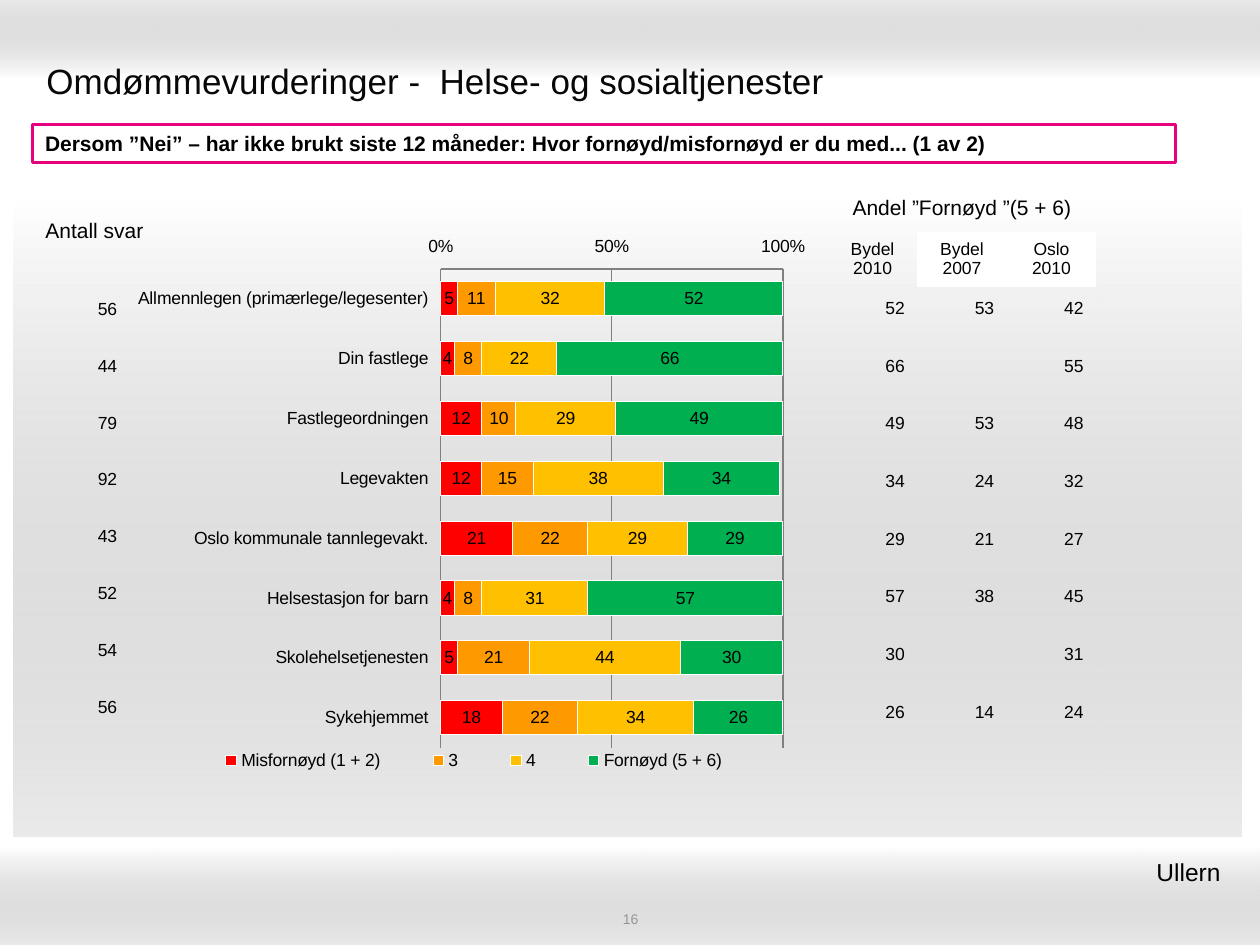
"""Build the slide on reputation ratings of health and social services."""
from lxml import etree
from pptx import Presentation
from pptx.chart.data import CategoryChartData
from pptx.dml.color import RGBColor
from pptx.enum.chart import XL_CHART_TYPE, XL_LEGEND_POSITION, XL_TICK_LABEL_POSITION, XL_TICK_MARK
from pptx.enum.shapes import MSO_SHAPE
from pptx.enum.text import MSO_ANCHOR, PP_ALIGN
from pptx.oxml import parse_xml
from pptx.oxml.ns import nsdecls, qn
from pptx.util import Inches, Pt

LEFT, CENTER, RIGHT = PP_ALIGN.LEFT, PP_ALIGN.CENTER, PP_ALIGN.RIGHT
TOP, MIDDLE = MSO_ANCHOR.TOP, MSO_ANCHOR.MIDDLE
LOW = XL_TICK_LABEL_POSITION.LOW
NO_TICK, INSIDE = XL_TICK_MARK.NONE, XL_TICK_MARK.INSIDE
NO_GRID_STYLE = "{2D5ABB26-0587-4C30-8999-92F81FD0307C}"

FONT = "Arial"
BLACK = RGBColor(0, 0, 0)
WHITE = RGBColor(0xFF, 0xFF, 0xFF)
TITLE_BLACK = RGBColor(0x08, 0x08, 0x08)
BAND_GRAY = RGBColor(0x99, 0x99, 0x99)
NUMBER_GRAY = RGBColor(0x96, 0x96, 0x96)
AXIS_GRAY = RGBColor(0x80, 0x80, 0x80)
PINK = RGBColor(0xE7, 0x00, 0x7E)

TITLE = "Omdømmevurderinger -  Helse- og sosialtjenester"
QUESTION = "Dersom ”Nei” – har ikke brukt siste 12 måneder: Hvor fornøyd/misfornøyd er du med... (1 av 2)"
BANDS = [((0, 0, 10, 0.62), 90), ((0, 6.72, 10, 0.78), 270), ((0.11, 1.56, 9.74, 5.08), 270)]
SERVICES = [
    "Allmennlegen (primærlege/legesenter)", "Din fastlege", "Fastlegeordningen", "Legevakten",
    "Oslo kommunale tannlegevakt.", "Helsestasjon for barn", "Skolehelsetjenesten", "Sykehjemmet",
]
RATINGS = [
    ("Misfornøyd (1 + 2)", RGBColor(0xFF, 0x00, 0x00), (5, 4, 12, 12, 21, 4, 5, 18)),
    ("3", RGBColor(0xFF, 0x99, 0x00), (11, 8, 10, 15, 22, 8, 21, 22)),
    ("4", RGBColor(0xFF, 0xC0, 0x00), (32, 22, 29, 38, 29, 31, 44, 34)),
    ("Fornøyd (5 + 6)", RGBColor(0x00, 0xB0, 0x50), (52, 66, 49, 34, 29, 57, 30, 26)),
]
SATISFIED = [
    ("52", "53", "42"), ("66", "", "55"), ("49", "53", "48"), ("34", "24", "32"),
    ("29", "21", "27"), ("57", "38", "45"), ("30", "", "31"), ("26", "14", "24"),
]
SATISFIED_HEADER = [("Andel ”Fornøyd ”(5 + 6)", "", ""), ("Bydel\n2010", "Bydel\n2007", "Oslo\n2010")]
RESPONSES = [("56",), ("44",), ("79",), ("92",), ("43",), ("52",), ("54",), ("56",)]


def write(frame, text, size=10, color=BLACK, bold=False, align=LEFT):
    """Fill a text frame with one paragraph per line of text."""
    frame.text = text
    for paragraph in frame.paragraphs:
        paragraph.alignment = align
        paragraph.font.name = FONT
        paragraph.font.size = Pt(size)
        paragraph.font.bold = bold
        paragraph.font.color.rgb = color


def add_text(slide, box, text, anchor=MIDDLE, **text_format):
    """Add a wrapping text box."""
    frame = slide.shapes.add_textbox(*map(Inches, box)).text_frame
    frame.word_wrap = True
    frame.vertical_anchor = anchor
    write(frame, text, **text_format)
    return frame


def add_rectangle(slide, box):
    """Add a rectangle without shadow."""
    shape = slide.shapes.add_shape(MSO_SHAPE.RECTANGLE, *map(Inches, box))
    shape.shadow.inherit = False
    return shape


def add_band(slide, box, angle):
    """Add a background band fading from white to translucent gray."""
    shape = add_rectangle(slide, box)
    shape.line.fill.background()
    shape.fill.gradient()
    shape.fill.gradient_angle = angle
    for stop, color in zip(shape.fill.gradient_stops, (WHITE, BAND_GRAY)):
        stop.color.rgb = color
    end_color = list(shape._element.spPr.iter(qn("a:srgbClr")))[-1]
    etree.SubElement(end_color, qn("a:alpha")).set("val", "20000")


def add_table(slide, left, top, column_width, heights, cells, **text_format):
    """Add an unstyled table with equal columns."""
    count = len(cells[0])
    frame = slide.shapes.add_table(
        len(cells), count, Inches(left), Inches(top), Inches(column_width * count), Inches(sum(heights)))
    table = frame.table
    table.first_row = table.horz_banding = False
    table._tbl.tblPr.find(qn("a:tableStyleId")).text = NO_GRID_STYLE
    for column in table.columns:
        column.width = Inches(column_width)
    for row, height, texts in zip(table.rows, heights, cells):
        row.height = Inches(height)
        for cell, text in zip(row.cells, texts):
            cell.fill.background()
            cell.vertical_anchor = MIDDLE
            write(cell.text_frame, text, **text_format)
    return table


def set_layout(element, x, y, width, height, inner=False):
    """Place a chart part by fractions of the chart area."""
    for old in element.findall(qn("c:layout")):
        element.remove(old)
    target = '<c:layoutTarget val="inner"/>' if inner else ""
    layout = parse_xml(
        f'<c:layout {nsdecls("c")}><c:manualLayout>{target}<c:xMode val="edge"/><c:yMode val="edge"/>'
        f'<c:x val="{x}"/><c:y val="{y}"/><c:w val="{width}"/><c:h val="{height}"/>'
        "</c:manualLayout></c:layout>")
    if inner:
        element.insert(0, layout)
    else:
        element.find(qn("c:legendPos")).addnext(layout)


def add_rating_chart(slide):
    """Add the stacked bars of ratings by service."""
    data = CategoryChartData(number_format="0")
    data.categories = SERVICES
    for name, _, values in RATINGS:
        data.add_series(name, values)
    box = map(Inches, (0.98, 1.79, 5.51, 4.54))
    chart = slide.shapes.add_chart(XL_CHART_TYPE.BAR_STACKED, *box, data).chart
    chart.has_title = False
    chart.font.name = FONT
    chart.font.size = Pt(10)
    chart.font.color.rgb = BLACK

    plot = chart.plots[0]
    plot.gap_width = 75
    plot.overlap = 100
    plot.vary_by_categories = False
    plot.has_data_labels = True
    plot.data_labels.show_value = True
    plot.data_labels.number_format = "0"
    plot.data_labels.number_format_is_linked = False
    for series, (_, color, _) in zip(plot.series, RATINGS):
        series.format.fill.solid()
        series.format.fill.fore_color.rgb = color
        series.format.line.color.rgb = WHITE

    services, percent = chart.category_axis, chart.value_axis
    services.reverse_order = True
    services.major_tick_mark = NO_TICK
    percent.major_tick_mark = INSIDE
    percent.minimum_scale, percent.maximum_scale, percent.major_unit = 0, 100, 50
    percent.has_major_gridlines = True
    percent.tick_labels.number_format = "General\\%"
    percent.tick_labels.number_format_is_linked = False
    for axis in (services, percent):
        axis.tick_label_position = LOW
    for part in (services, percent, percent.major_gridlines):
        part.format.line.color.rgb = AXIS_GRAY

    chart.has_legend = True
    chart.legend.position = XL_LEGEND_POSITION.BOTTOM
    chart.legend.include_in_layout = False
    set_layout(chart._chartSpace.chart.plotArea, 0.457, 0.076, 0.493, 0.837, inner=True)
    set_layout(chart.legend._element, 0.08, 0.91, 0.85, 0.05)


def main():
    """Assemble and save the slide."""
    presentation = Presentation()
    presentation.slide_width, presentation.slide_height = Inches(10), Inches(7.5)
    slide = presentation.slides.add_slide(presentation.slide_layouts[6])
    for box, angle in BANDS:
        add_band(slide, box, angle)
    add_text(slide, (0.27, 0.36, 9.45, 0.55), TITLE, size=20, color=TITLE_BLACK)
    number = add_text(slide, (3.42, 7.22, 3.17, 0.14), "16", size=8, color=NUMBER_GRAY, align=CENTER)
    number.margin_top = number.margin_bottom = 0

    banner = add_rectangle(slide, (0.26, 0.99, 9.07, 0.3))
    banner.fill.solid()
    banner.fill.fore_color.rgb = WHITE
    banner.line.color.rgb = PINK
    banner.line.width = Pt(2)
    write(banner.text_frame, QUESTION, size=12, bold=True)

    add_rating_chart(slide)
    add_table(slide, 6.57, 2.22, 0.71, [3.66 / 8] * 8, SATISFIED, align=RIGHT)
    header = add_table(slide, 6.57, 1.47, 0.71, [0.37, 0.43], SATISFIED_HEADER, align=CENTER)
    header.cell(0, 0).merge(header.cell(0, 2))
    write(header.cell(0, 0).text_frame, SATISFIED_HEADER[0][0], size=12, align=CENTER)
    for column in (1, 2):
        header.cell(1, column).fill.solid()
        header.cell(1, column).fill.fore_color.rgb = WHITE
    add_table(slide, 0.51, 2.23, 0.52, [3.61 / 8] * 8, RESPONSES, align=RIGHT)
    add_table(slide, 0.04, 1.54, 1.42, [0.59], [("Antall svar",)], size=12, align=CENTER)
    add_text(slide, (6.1, 6.75, 3.74, 0.34), "Ullern ", anchor=TOP, size=14, align=RIGHT)
    presentation.save("out.pptx")


if __name__ == "__main__":
    main()
